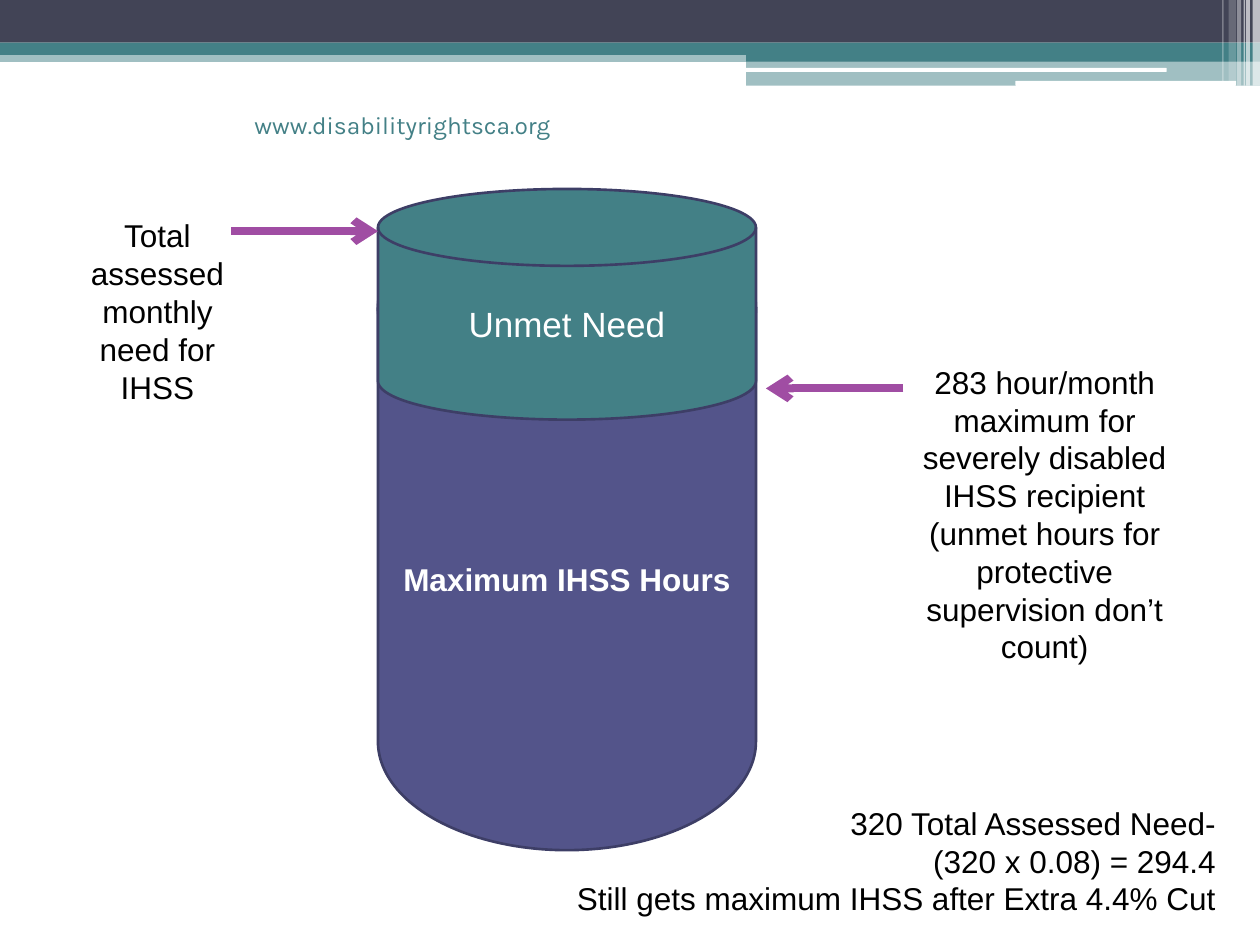
from lxml.etree import SubElement as add_node
from pptx import Presentation as Deck
from pptx.dml.color import RGBColor as Color
from pptx.enum.shapes import MSO_CONNECTOR as Link, MSO_SHAPE as Kind
from pptx.enum.text import MSO_ANCHOR as Anchor, PP_ALIGN as Align
from pptx.oxml.ns import qn
from pptx.util import Cm, Pt

TEAL, WHITE, SLATE = "438086", "FFFFFF", "424456"
INDIGO, EDGE, PURPLE = "53548A", "3D3E66", "A04DA3"


def paint(fill, tone, alpha=100):
    fill.solid()
    fill.fore_color.rgb = Color.from_string(tone)
    if alpha < 100:
        node = fill._xPr.find(qn("a:solidFill"))[0]
        add_node(node, qn("a:alpha"), val=str(alpha * 1000))


def write(frame, text, size=18, font="Arial", tone="000000", bold=False,
          align=Align.CENTER, anchor=Anchor.TOP):
    frame.word_wrap = True
    frame.vertical_anchor = anchor
    frame.text = text
    for para in frame.paragraphs:
        para.alignment = align
        para.font.size = Pt(size)
        para.font.name = font
        para.font.bold = bold
        para.font.color.rgb = Color.from_string(tone)


def shape(slide, kind, box, tone, alpha=100, edge=None):
    item = slide.shapes.add_shape(kind, *map(Cm, box))
    item.shadow.inherit = False
    paint(item.fill, tone, alpha)
    if edge:
        paint(item.line.fill, edge)
        item.line.width = Pt(1.5)
    else:
        item.line.fill.background()
    return item


def label(slide, box, text, **form):
    item = slide.shapes.add_textbox(*map(Cm, box))
    write(item.text_frame, text, **form)


def arrow(slide, start, end, y):
    line = slide.shapes.add_connector(Link.STRAIGHT, *map(Cm, (start, y, end, y)))
    paint(line.line.fill, PURPLE)
    line.line.width = Pt(4.5)
    add_node(line.line._get_or_add_ln(), qn("a:tailEnd"), type="arrow")
    add_node(line._element.spPr, qn("a:effectLst"))


def header(slide, box):
    left, top, wide, high = box
    mid = left + 15.04
    bars = [
        (left, 1.02, wide, 0.23, TEAL, 50),
        (left, 0, wide, 0.86, SLATE, 100),
        (left, 0.86, wide, 0.25, TEAL, 100),
        (mid, 0.99, left + wide - mid, 0.25, TEAL, 100),
        (mid, 1.22, left + wide - mid, 0.51, TEAL, 50),
    ]
    for x, y, w, h, tone, alpha in bars:
        shape(slide, Kind.RECTANGLE, (x, top + y, w, h), tone, alpha)
    for x, y, w, h in [(15.01, 1.37, 8.51, 0.08), (20.47, 1.63, 4.45, 0.1)]:
        shape(slide, Kind.ROUNDED_RECTANGLE, (left + x, top + y, w, h), WHITE)
    stripes = [
        (0.15, 0.15, 0, 65), (0.28, 0.08, 0, 65), (0.33, 0.03, 0, 60),
        (0.46, 0.08, 0, 40), (0.63, 0.15, 0.1, 20), (0.76, 0.03, 0.1, 30),
    ]
    for back, w, cut, alpha in stripes:
        spot = (left + wide - back, top, w, high - cut)
        shape(slide, Kind.RECTANGLE, spot, WHITE, alpha)


def tank(slide, box):
    left, top, wide, high = box
    parts = [
        (0.2, high - 0.2, INDIGO, "Maximum IHSS Hours", 18, True),
        (0, 4.65, TEAL, "Unmet Need", 20, False),
    ]
    for y, h, tone, text, size, bold in parts:
        disk = shape(slide, Kind.FLOWCHART_MAGNETIC_DISK,
                     (left, top + y, wide, h), tone, edge=EDGE)
        write(disk.text_frame, text, size=size, tone=WHITE, bold=bold,
              anchor=Anchor.MIDDLE)


def notes(slide, box):
    left, top, wide, high = box
    right = left + wide
    arrow(slide, right + 2.97, right + 0.2, top + 4.02)
    label(slide, (right + 2.75, top + 3.38, 6.14, 6.4),
          "283 hour/month maximum for severely disabled IHSS recipient\n"
          "(unmet hours for protective supervision don’t count)")
    arrow(slide, left - 2.96, left, top + 0.85)
    label(slide, (left - 6.35, top + 0.43, 3.81, 4.11),
          "Total assessed monthly need for IHSS")


def main():
    deck = Deck()
    deck.slide_width, deck.slide_height = Cm(25.4), Cm(19.05)
    slide = deck.slides.add_slide(deck.slide_layouts[6])
    header(slide, (0, 0, 25.4, 1.73))
    label(slide, (4.88, 2.1, 9.73, 0.85), "www.disabilityrightsca.org",
          size=14, font="Karla", tone=TEAL, align=Align.LEFT)
    body = (7.62, 3.81, 7.62, 13.33)
    tank(slide, body)
    notes(slide, body)
    label(slide, (1.9, 16.08, 22.86, 2.57),
          "320 Total Assessed Need-\n(320 x 0.08) = 294.4\n"
          "Still gets maximum IHSS after Extra 4.4% Cut", align=Align.RIGHT)
    deck.save("out.pptx")


if __name__ == "__main__":
    main()
